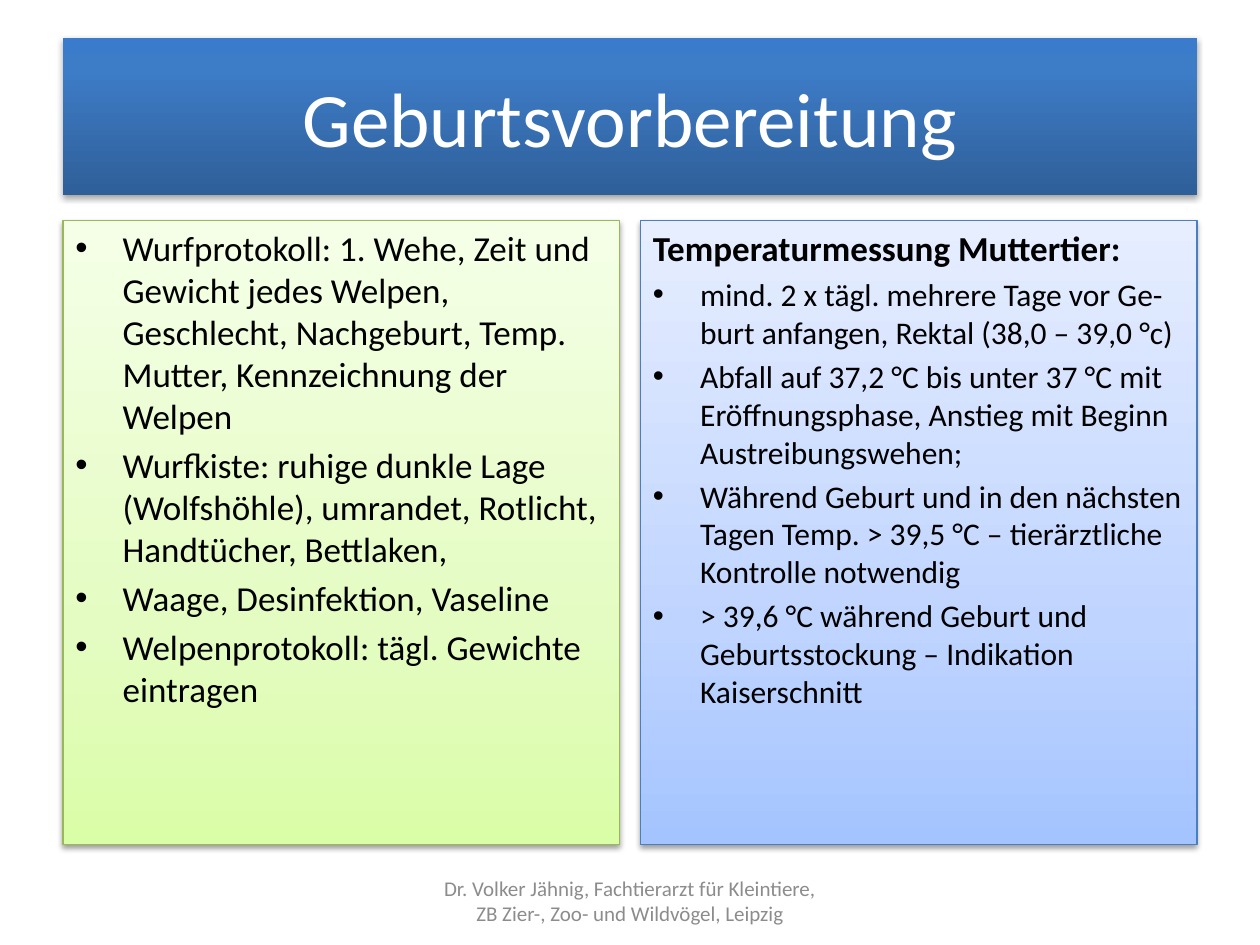
from lxml import etree
from pptx import Presentation
from pptx.dml.color import RGBColor
from pptx.enum.shapes import MSO_SHAPE
from pptx.enum.text import MSO_ANCHOR, PP_ALIGN
from pptx.oxml.ns import qn
from pptx.util import Pt

RECTANGLE = MSO_SHAPE.RECTANGLE
TOP, MIDDLE = MSO_ANCHOR.TOP, MSO_ANCHOR.MIDDLE
LEFT, CENTER = PP_ALIGN.LEFT, PP_ALIGN.CENTER

FONT = "Calibri"
COLORS = {"white": "FFFFFF", "black": "000000", "footer": "8C8C8C",
          "green line": "98B955", "blue line": "4B7EBC"}
# Gradient stops run from the bottom up: (percent, colour)
TITLE_STOPS = [(0, "2F5F99"), (80, "3D7CC7"), (100, "3A7CCB")]
GREEN_STOPS = [(0, "DAFDA7"), (35, "E4FCC2"), (100, "F5FFE7")]
BLUE_STOPS = [(0, "A4C4FF"), (35, "BFD4FF"), (100, "E6EEFF")]

TITLE = "Geburtsvorbereitung"
FOOTER = ("Dr. Volker Jähnig, Fachtierarzt für Kleintiere, "
          "ZB Zier-, Zoo- und Wildvögel, Leipzig")
PANELS = [
    {"stops": GREEN_STOPS, "line": "green line", "heading": None, "size": 20,
     "bullets": [
         "Wurfprotokoll: 1. Wehe, Zeit und Gewicht jedes Welpen, Geschlecht, "
         "Nachgeburt, Temp. Mutter, Kennzeichnung der Welpen",
         "Wurfkiste: ruhige dunkle Lage (Wolfshöhle), umrandet, Rotlicht, "
         "Handtücher, Bettlaken,",
         "Waage, Desinfektion, Vaseline",
         "Welpenprotokoll: tägl. Gewichte eintragen"]},
    {"stops": BLUE_STOPS, "line": "blue line",
     "heading": "Temperaturmessung Muttertier:", "size": 18,
     "bullets": [
         "mind. 2 x tägl. mehrere Tage vor Ge-burt anfangen, "
         "Rektal (38,0 – 39,0 °c)",
         "Abfall auf 37,2 °C bis unter 37 °C mit Eröffnungsphase, "
         "Anstieg mit Beginn Austreibungswehen;",
         "Während Geburt und in den nächsten Tagen Temp. > 39,5 °C – "
         "tierärztliche Kontrolle notwendig",
         "> 39,6 °C während Geburt und Geburtsstockung – "
         "Indikation Kaiserschnitt"]},
]

MARGIN, CONTENT_WIDTH = 36, 648
PANEL_TOP, PANEL_WIDTH, PANEL_HEIGHT = 126, 318, 356.5
PANEL_STEP = CONTENT_WIDTH - PANEL_WIDTH
HEADING_SIZE, INDENT = 20, 27


def place(shape, left, top, width, height):
    shape.left, shape.top = Pt(left), Pt(top)
    shape.width, shape.height = Pt(width), Pt(height)


def add_color(parent, color):
    return etree.SubElement(parent, qn("a:srgbClr"), val=color)


def fill_gradient(shape, stops):
    shape.fill.gradient()
    shape.fill.gradient_angle = 90
    stop_list = shape._element.spPr.find(".//" + qn("a:gsLst"))
    for old_stop in list(stop_list):
        stop_list.remove(old_stop)
    for percent, color in stops:
        add_color(etree.SubElement(stop_list, qn("a:gs"), pos=str(percent * 1000)), color)


def add_shadow(shape, opacity, distance):
    shape.shadow.inherit = False
    effects = shape._element.spPr.find(qn("a:effectLst"))
    shadow = etree.SubElement(effects, qn("a:outerShdw"), blurRad=str(Pt(3.1)),
                              dist=str(Pt(distance)), dir="5400000", rotWithShape="0")
    color = add_color(shadow, COLORS["black"])
    etree.SubElement(color, qn("a:alpha"), val=str(opacity * 1000))


def write(paragraph, text, size, color, align, bold=False):
    paragraph.text = text
    paragraph.alignment = align
    font = paragraph.runs[0].font
    font.name, font.size, font.bold = FONT, Pt(size), bold
    font.color.rgb = RGBColor.from_string(COLORS[color])


def add_bullet(paragraph):
    properties = paragraph._p.get_or_add_pPr()
    properties.set("marL", str(Pt(INDENT)))
    properties.set("indent", str(-Pt(INDENT)))
    etree.SubElement(properties, qn("a:buFont"), typeface="Arial")
    etree.SubElement(properties, qn("a:buChar"), char="•")


def add_panel(slide, panel, left):
    box = slide.shapes.add_shape(RECTANGLE, Pt(left), Pt(PANEL_TOP),
                                 Pt(PANEL_WIDTH), Pt(PANEL_HEIGHT))
    fill_gradient(box, panel["stops"])
    box.line.color.rgb = RGBColor.from_string(COLORS[panel["line"]])
    box.line.width = Pt(0.75)
    add_shadow(box, 38, 1.6)
    frame = box.text_frame
    frame.word_wrap, frame.vertical_anchor = True, TOP

    entries = [(text, panel["size"], False) for text in panel["bullets"]]
    if panel["heading"]:
        entries.insert(0, (panel["heading"], HEADING_SIZE, True))
    for index, (text, size, is_heading) in enumerate(entries):
        paragraph = frame.add_paragraph() if index else frame.paragraphs[0]
        write(paragraph, text, size, "black", LEFT, bold=is_heading)
        paragraph.space_before = Pt(0.2 * size)
        if not is_heading:
            add_bullet(paragraph)


def main():
    deck = Presentation()
    deck.slide_width, deck.slide_height = Pt(720), Pt(540)
    slide = deck.slides.add_slide(deck.slide_layouts[5])

    title = slide.shapes.title
    place(title, MARGIN, 21.6, CONTENT_WIDTH, 90)
    fill_gradient(title, TITLE_STOPS)
    add_shadow(title, 35, 1.8)
    title.text_frame.vertical_anchor = MIDDLE
    write(title.text_frame.paragraphs[0], TITLE, 44, "white", CENTER)

    for column, panel in enumerate(PANELS):
        add_panel(slide, panel, MARGIN + column * PANEL_STEP)

    footer = slide.shapes.add_textbox(Pt(246), Pt(500.5), Pt(228), Pt(28.75))
    footer.text_frame.word_wrap = True
    footer.text_frame.vertical_anchor = MIDDLE
    write(footer.text_frame.paragraphs[0], FOOTER, 12, "footer", CENTER)

    deck.save("out.pptx")


if __name__ == "__main__":
    main()
